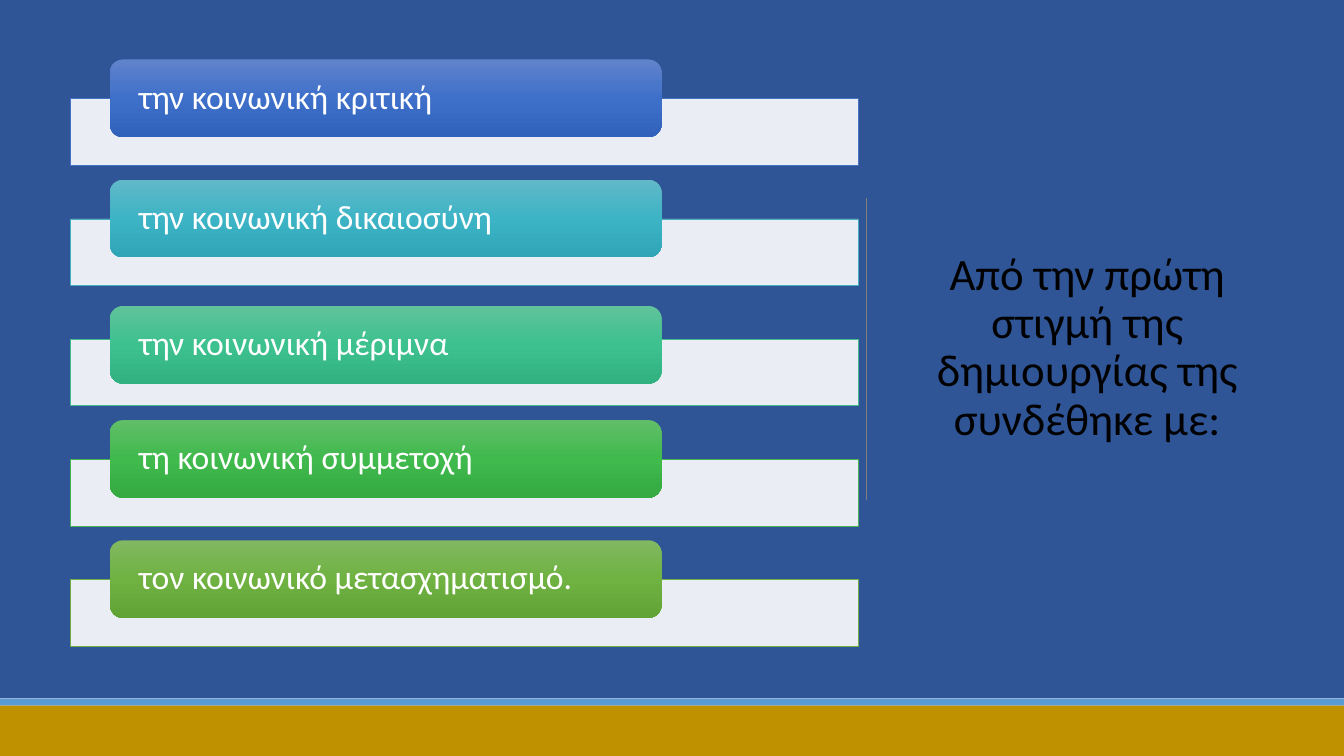
"""Build a slide listing five social aims beside a heading."""
import copy
from dataclasses import dataclass

import lxml.etree
import pptx
import pptx.dml.color
import pptx.enum.shapes
import pptx.enum.text
import pptx.oxml.ns
import pptx.util

RGB = pptx.dml.color.RGBColor
SHAPE = pptx.enum.shapes.MSO_SHAPE
ALIGN = pptx.enum.text.PP_ALIGN
qn = pptx.oxml.ns.qn

WHITE = RGB(0xFF, 0xFF, 0xFF)
BLACK = RGB(0x00, 0x00, 0x00)
GREY = RGB(0x80, 0x80, 0x80)
NAVY = RGB(0x2F, 0x55, 0x97)
SKY = RGB(0x5B, 0x9B, 0xD5)
GOLD = RGB(0xBF, 0x90, 0x00)

WIDTH = pptx.util.Inches(13.333)
HEIGHT = pptx.util.Inches(7.5)
FIRST_BAR, BAR_PITCH = 13.07, 15.9
RULE_X, RULE_TOP, RULE_BOTTOM = 64.44, 26.13, 66.13


@dataclass(frozen=True)
class Box:
    """A rectangle in percent of the slide's width and height."""
    x: float
    y: float
    w: float
    h: float

    def emu(self) -> tuple[int, int, int, int]:
        """Return left, top, width and height in EMU."""
        return across(self.x), down(self.y), across(self.w), down(self.h)


@dataclass(frozen=True)
class Band:
    """A plain full-width band."""
    y: float
    h: float
    color: RGB


@dataclass(frozen=True)
class Aim:
    """One list row: label, bar outline, gradient and label rise above the bar."""
    text: str
    outline: RGB
    stops: tuple[RGB, RGB, RGB]
    rise: float = 5.2


BANDS = (Band(0, 92.4, NAVY), Band(92.4, 0.93, SKY), Band(93.33, 6.67, GOLD))
AIMS = (
    Aim("την κοινωνική κριτική", RGB(0x44, 0x72, 0xC4),
        (RGB(0x61, 0x83, 0xCB), RGB(0x3E, 0x70, 0xCA), RGB(0x30, 0x62, 0xBB))),
    Aim("την κοινωνική δικαιοσύνη", RGB(0x43, 0xAF, 0xC0),
        (RGB(0x61, 0xB8, 0xC7), RGB(0x3D, 0xB4, 0xC6), RGB(0x30, 0xA5, 0xB7))),
    Aim("την κοινωνική μέριμνα", RGB(0x43, 0xBB, 0x8D),
        (RGB(0x60, 0xC3, 0x9A), RGB(0x3D, 0xC1, 0x8F), RGB(0x31, 0xB0, 0x80)), 4.4),
    Aim("τη κοινωνική συμμετοχή", RGB(0x45, 0xB4, 0x51),
        (RGB(0x60, 0xBE, 0x68), RGB(0x40, 0xB9, 0x4D), RGB(0x34, 0xAA, 0x41))),
    Aim("τον κοινωνικό μετασχηματισμό.", RGB(0x70, 0xAD, 0x47),
        (RGB(0x81, 0xB8, 0x61), RGB(0x6F, 0xB2, 0x42), RGB(0x62, 0xA3, 0x36))),
)
HEADING = "Από την πρώτη στιγμή της δημιουργίας της συνδέθηκε με:"


def across(share: float) -> int:
    """Turn a percentage of the slide width into EMU."""
    return round(WIDTH * share / 100)


def down(share: float) -> int:
    """Turn a percentage of the slide height into EMU."""
    return round(HEIGHT * share / 100)


def apply(target: object, values: dict[str, object]) -> None:
    """Set every named attribute on the target."""
    for name, value in values.items():
        setattr(target, name, value)


def add_rect(shapes, box: Box, color: RGB):
    """Add a solid rectangle without outline or shadow."""
    sp = shapes.add_shape(SHAPE.RECTANGLE, *box.emu())
    sp.shadow.inherit = False
    sp.fill.solid()
    sp.fill.fore_color.rgb = color
    sp.line.fill.background()
    return sp


def write(sp, text: str, size: int, color: RGB, align: ALIGN, inset: float) -> None:
    """Write one vertically centred paragraph into a shape."""
    tf = sp.text_frame
    side = pptx.util.Inches(inset)
    apply(tf, {"word_wrap": True, "margin_left": side, "margin_right": side,
               "vertical_anchor": pptx.enum.text.MSO_ANCHOR.MIDDLE})
    p = tf.paragraphs[0]
    apply(p, {"alignment": align, "line_spacing": 0.9})
    r = p.add_run()
    r.text = text
    apply(r.font, {"name": "Calibri", "size": pptx.util.Pt(size)})
    r.font.color.rgb = color


def fill_gradient(sp, colors: tuple[RGB, RGB, RGB]) -> None:
    """Fill a shape with three evenly spaced stops running downwards."""
    sp.fill.gradient()
    sp.fill.gradient_angle = 270
    stops = sp.fill.gradient_stops
    first = sp._element.spPr.find(".//" + qn("a:gs"))
    first.addnext(copy.deepcopy(first))
    stops = sp.fill.gradient_stops
    for i, (stop, color) in enumerate(zip(stops, colors)):
        stop.color.rgb = color
        stop.position = i / 2


def add_aim(shapes, aim: Aim, row: int) -> None:
    """Draw one list row: a pale bar with a label overlapping its top."""
    y = FIRST_BAR + row * BAR_PITCH
    bar = add_rect(shapes, Box(5.25, y, 58.59, 8.8), WHITE)
    tint = bar._element.spPr.find(".//" + qn("a:srgbClr"))
    lxml.etree.SubElement(tint, qn("a:alpha"), val="90000")
    bar.line.color.rgb = aim.outline
    bar.line.width = pptx.util.Pt(0.5)

    label = shapes.add_shape(SHAPE.ROUNDED_RECTANGLE,
                             *Box(8.18, y - aim.rise, 41.04, 10.27).emu())
    label.shadow.inherit = False
    label.line.fill.background()
    fill_gradient(label, aim.stops)
    write(label, aim.text, 24, WHITE, ALIGN.LEFT, 0.25)


def add_rule(shapes) -> None:
    """Draw the thin vertical divider."""
    x = across(RULE_X)
    rule = shapes.add_connector(pptx.enum.shapes.MSO_CONNECTOR.STRAIGHT,
                                x, down(RULE_TOP), x, down(RULE_BOTTOM))
    rule.line.color.rgb = GREY
    rule.line.width = pptx.util.Pt(0.5)
    lxml.etree.SubElement(rule._element.spPr, qn("a:effectLst"))


def main() -> None:
    """Build and save the slide."""
    prs = pptx.Presentation()
    apply(prs, {"slide_width": WIDTH, "slide_height": HEIGHT})
    s = prs.slides.add_slide(prs.slide_layouts[6])
    for band in BANDS:
        add_rect(s.shapes, Box(0, band.y, 100, band.h), band.color)
    heading = s.shapes.add_textbox(*Box(67.07, 9.2, 27.68, 73.73).emu())
    write(heading, HEADING, 32, BLACK, ALIGN.CENTER, 0.1)
    for row, aim in enumerate(AIMS):
        add_aim(s.shapes, aim, row)
    add_rule(s.shapes)
    prs.save("out.pptx")


if __name__ == "__main__":
    main()
